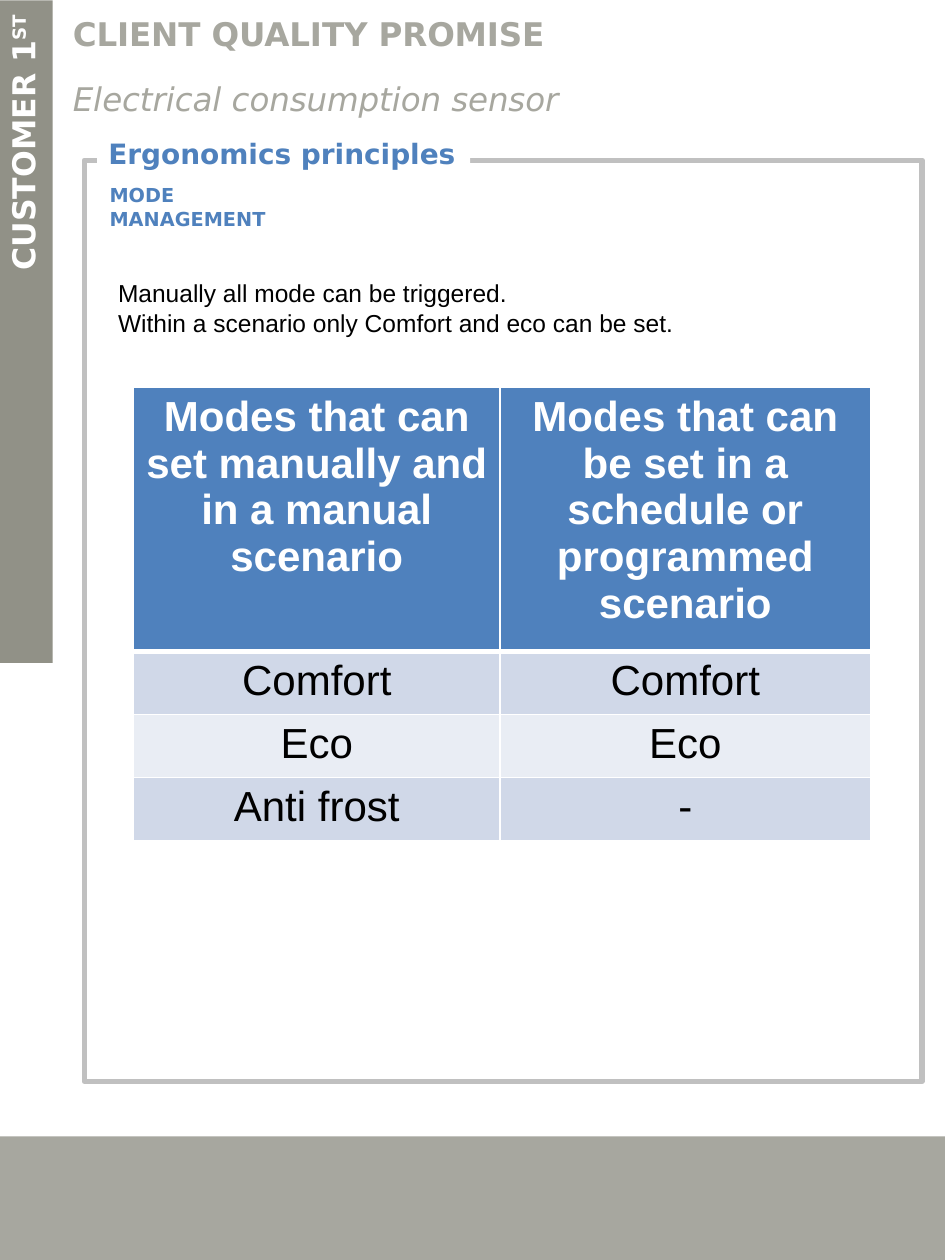
from dataclasses import dataclass

import pptx
import pptx.dml.color
import pptx.enum.shapes
import pptx.enum.text
import pptx.oxml.ns
import pptx.presentation
import pptx.util
from lxml import etree

Cm = pptx.util.Cm
Pt = pptx.util.Pt
RGBColor = pptx.dml.color.RGBColor
Align = pptx.enum.text.PP_ALIGN
Anchor = pptx.enum.text.MSO_ANCHOR

WHITE = RGBColor(0xFF, 0xFF, 0xFF)
BLACK = RGBColor(0, 0, 0)
BLUE = RGBColor(0x4F, 0x81, 0xBD)
BAND_DARK = RGBColor(0xD0, 0xD8, 0xE8)
BAND_LIGHT = RGBColor(0xE9, 0xED, 0xF4)
STONE = RGBColor(0xA7, 0xA7, 0x9F)
DARK_STONE = RGBColor(0x91, 0x91, 0x87)
SILVER = RGBColor(0xC0, 0xC0, 0xC0)
HEADING_FONT = "DejaVu Sans"
BODY_FONT = "Arial"


@dataclass
class Area:
    """Position and size in centimetres."""
    left: float
    top: float
    width: float
    height: float

    def lengths(self) -> tuple:
        return Cm(self.left), Cm(self.top), Cm(self.width), Cm(self.height)


@dataclass
class Style:
    font: str
    size: float
    color: RGBColor
    bold: bool = False
    italic: bool = False
    raised: bool = False


def add_rectangle(page, area: Area, fill=None, line=None):
    box = page.shapes.add_shape(pptx.enum.shapes.MSO_SHAPE.RECTANGLE, *area.lengths())
    box.shadow.inherit = False
    if fill is None:
        box.fill.background()
    else:
        box.fill.solid()
        box.fill.fore_color.rgb = fill
    if line is None:
        box.line.fill.background()
    else:
        box.line.color.rgb = line
        box.line.width = Pt(3)
    return box


def add_text_box(page, area: Area):
    box = page.shapes.add_textbox(*area.lengths())
    box.text_frame.word_wrap = True
    return box


def style_span(span, style: Style) -> None:
    span.font.name = style.font
    span.font.size = Pt(style.size)
    span.font.color.rgb = style.color
    span.font.bold = style.bold
    span.font.italic = style.italic
    if style.raised:
        span.font._element.set("baseline", "30000")


def write(frame, text: str, styles: list[Style], align=Align.LEFT) -> None:
    """Fill a frame, with one style for each paragraph."""
    frame.text = text
    for para, style in zip(frame.paragraphs, styles):
        para.alignment = align
        for span in para.runs:
            style_span(span, style)


def set_borders(cell, bottom: float) -> None:
    properties = cell._tc.get_or_add_tcPr()
    qn = pptx.oxml.ns.qn
    for side, width in (("L", 1), ("R", 1), ("T", 1), ("B", bottom)):
        line = etree.SubElement(properties, qn(f"a:ln{side}"), w=str(Pt(width)))
        solid = etree.SubElement(line, qn("a:solidFill"))
        etree.SubElement(solid, qn("a:srgbClr"), val=str(WHITE))


def add_mode_table(page) -> None:
    rows = [
        ("Modes that can set manually and in a manual scenario",
         "Modes that can be set in a schedule or programmed scenario"),
        ("Comfort", "Comfort"),
        ("Eco", "Eco"),
        ("Anti frost", "-"),
    ]
    fills = [BLUE, BAND_DARK, BAND_LIGHT, BAND_DARK]
    heights = [5.3, 1.27, 1.27, 1.27]
    widths = [7.39, 7.47]
    area = Area(2.69, 7.8, sum(widths), sum(heights))
    table = page.shapes.add_table(len(rows), len(widths), *area.lengths()).table
    for column, width in zip(table.columns, widths):
        column.width = Cm(width)
    for index, (texts, fill, height) in enumerate(zip(rows, fills, heights)):
        header = index == 0
        style = Style(BODY_FONT, 24, WHITE if header else BLACK, bold=header)
        table.rows[index].height = Cm(height)
        for cell, text in zip(table.rows[index].cells, texts):
            set_borders(cell, bottom=3 if header else 1)
            cell.fill.solid()
            cell.fill.fore_color.rgb = fill
            write(cell.text_frame, text, [style], Align.CENTER)


def add_side_band(page) -> None:
    band = add_rectangle(page, Area(-6.15, 6.15, 13.36, 1.07), DARK_STONE)
    band.rotation = 270
    frame = band.text_frame
    frame.vertical_anchor = Anchor.MIDDLE
    frame.margin_left = frame.margin_right = Cm(0.3)
    write(frame, "CUSTOMER 1", [Style(HEADING_FONT, 18, WHITE, bold=True)], Align.RIGHT)
    para = frame.paragraphs[0]
    para.line_spacing = 0.8
    ordinal = para.add_run()
    ordinal.text = "ST"
    style_span(ordinal, Style(HEADING_FONT, 18, WHITE, bold=True, raised=True))


def add_titles(page) -> None:
    frame = add_text_box(page, Area(0, 0.66, 15.32, 1.9)).text_frame
    frame.vertical_anchor = Anchor.MIDDLE
    frame.margin_left = Cm(1.47)
    write(frame, "CLIENT QUALITY PROMISE\nElectrical consumption sensor", [
        Style(HEADING_FONT, 32, STONE, bold=True, raised=True),
        Style(HEADING_FONT, 32, STONE, italic=True, raised=True),
    ])
    for para in frame.paragraphs:
        para.line_spacing = 0.8
    frame.paragraphs[1].space_before = Pt(6.4)


def add_section(page) -> None:
    # Frame with its heading set into the top edge
    add_rectangle(page, Area(1.7, 3.23, 16.89, 18.57), line=SILVER)
    frame = add_rectangle(page, Area(1.96, 2.62, 7.52, 0.94), WHITE).text_frame
    frame.word_wrap = False
    frame.vertical_anchor = Anchor.TOP
    frame.margin_left = Cm(0.18)
    write(frame, "Ergonomics principles",
          [Style(HEADING_FONT, 16, BLUE, bold=True)], Align.CENTER)

    # Subheading and explanation
    subheading = add_text_box(page, Area(1.96, 3.58, 5.08, 0.74))
    write(subheading.text_frame, "MODE MANAGEMENT",
          [Style(HEADING_FONT, 11, BLUE, bold=True)])
    explanation = add_text_box(page, Area(2.13, 5.49, 15.57, 1.45))
    write(explanation.text_frame,
          "Manually all mode can be triggered.\n"
          "Within a scenario only Comfort and eco can be set.",
          [Style(BODY_FONT, 14, BLACK)] * 2)


def main() -> None:
    deck = pptx.Presentation()
    deck.slide_width, deck.slide_height = Cm(19.05), Cm(25.4)
    page = deck.slides.add_slide(deck.slide_layouts[6])

    # Footer and side bands
    add_rectangle(page, Area(0, 22.91, 19.05, 2.49), STONE)
    add_side_band(page)

    # Content
    add_section(page)
    add_mode_table(page)
    add_titles(page)
    deck.save("out.pptx")


if __name__ == "__main__":
    main()
